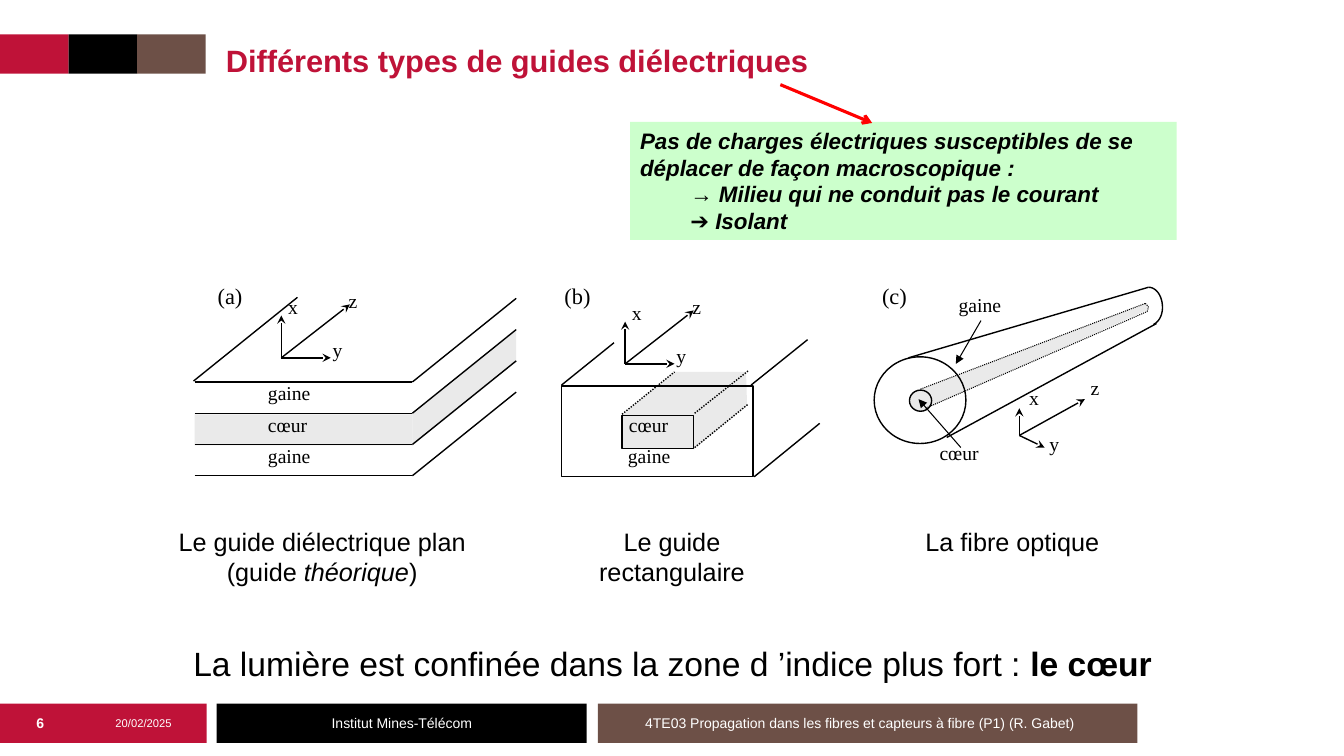
"""Builds the slide on the types of dielectric waveguides."""
from lxml.etree import SubElement
from pptx import Presentation
from pptx.dml.color import RGBColor
from pptx.enum.dml import MSO_LINE
from pptx.enum.shapes import MSO_CONNECTOR, MSO_SHAPE
from pptx.enum.text import MSO_ANCHOR, PP_ALIGN
from pptx.oxml.ns import qn
from pptx.util import Inches, Pt

rgb = RGBColor.from_string
RED, BROWN, BLACK, WHITE, GREY = "BF1238", "6D5047", "000000", "FFFFFF", "EAEAEA"
TOP, MIDDLE, BOTTOM = MSO_ANCHOR.TOP, MSO_ANCHOR.MIDDLE, MSO_ANCHOR.BOTTOM
LEFT, CENTER = PP_ALIGN.LEFT, PP_ALIGN.CENTER
DOT = MSO_LINE.ROUND_DOT

prs = Presentation()
prs.slide_width, prs.slide_height = Inches(13.33), Inches(7.5)
slide = prs.slides.add_slide(prs.slide_layouts[5])
shapes = slide.shapes


def write(s, paras, size, font="Arial", color=BLACK, align=LEFT, anchor=TOP, wrap=True):
    """Fills a shape with paragraphs, each a list of (text, style letters) runs."""
    tf = s.text_frame
    tf.word_wrap, tf.vertical_anchor = wrap, anchor
    tf.margin_left = tf.margin_right = Inches(0.1)
    tf.margin_top = tf.margin_bottom = Inches(0.05)
    for i, runs in enumerate(paras):
        p = tf.add_paragraph() if i else tf.paragraphs[0]
        p.alignment = align
        for text, style in runs:
            r = p.add_run()
            r.text = text
            r.font.name, r.font.size = font, Pt(size)
            r.font.bold, r.font.italic = "b" in style, "i" in style
            r.font.color.rgb = rgb(color)


def draw_line(start, end, width=1, dash=None, tail=None, color=BLACK):
    """Draws a straight line, with an arrowhead at its end if one is named."""
    s = shapes.add_connector(MSO_CONNECTOR.STRAIGHT, *map(Inches, start + end))
    s.line.color.rgb, s.line.width = rgb(color), Pt(width)
    if dash:
        s.line.dash_style = dash
    if tail:
        SubElement(s.element.spPr.find(qn("a:ln")), qn("a:tailEnd"), type=tail)
    SubElement(s.element.spPr, qn("a:effectLst"))


title = shapes.title
title.left, title.top, title.width, title.height = map(Inches, (2.14, -0.02, 10.51, 0.85))
write(title, [[("Différents types de guides diélectriques", "b")]], 22, color=RED, anchor=BOTTOM)

# (points, fill, line width, dash)
outlines = [
    ([(4.09, 4.1), (4.09, 4.42), (5.12, 3.59), (5.12, 3.27), (4.09, 4.1)], GREY, 0, None),
    ([(9.14, 3.86), (11.36, 3.01), (11.38, 3.03), (11.39, 3.06), (11.37, 3.08),
      (9.19, 4.05), (9.25, 3.99), (9.24, 3.92), (9.17, 3.87), (9.14, 3.86)], GREY, 0, None),
    ([(6.88, 4.46), (6.88, 4.11), (7.4, 3.69), (7.41, 4.02), (6.88, 4.46)], GREY, 0, None),
    ([(6.17, 4.12), (6.88, 4.12), (7.4, 3.69), (6.69, 3.69), (6.17, 4.12)], GREY, 0, None),
]
fibre_end = [(11.39, 2.85), (11.47, 2.85), (11.53, 2.94), (11.53, 3.05),
             (11.53, 3.12), (11.5, 3.19), (11.44, 3.22)]
core_end = [(11.36, 3.01), (11.38, 3.03), (11.39, 3.04), (11.39, 3.05),
            (11.39, 3.06), (11.38, 3.08), (11.38, 3.09)]
for curve, width, dash in [(fibre_end, 1, None), (core_end, 0.75, DOT)]:
    points = [curve[0]]
    for a, b, c, d in (curve[:4], curve[3:]):
        for t in [k / 12 for k in range(1, 13)]:
            u = 1 - t
            points.append(tuple(u**3 * a[j] + 3 * u * u * t * b[j] + 3 * u * t * t * c[j]
                                + t**3 * d[j] for j in (0, 1)))
    outlines.append((points, None, width, dash))

painted = []
for points, fill, width, dash in outlines:
    points = [(Inches(x), Inches(y)) for x, y in points]
    builder = shapes.build_freeform(*points[0], scale=1.0)
    builder.add_line_segments(points[1:], close=False)
    painted.append((builder.convert_to_shape(), fill, width, dash))

RECT, OVAL = MSO_SHAPE.RECTANGLE, MSO_SHAPE.OVAL
for kind, box, fill, width in [
    (RECT, (0, 6.98, 2.05, 0.39), RED, 0),
    (RECT, (2.15, 6.98, 3.67, 0.39), BLACK, 0),
    (RECT, (5.93, 6.98, 5.35, 0.39), BROWN, 0),
    (RECT, (0, 0.34, 0.68, 0.39), RED, 0),
    (RECT, (0.68, 0.34, 0.68, 0.39), BLACK, 0),
    (RECT, (1.36, 0.34, 0.68, 0.39), BROWN, 0),
    (RECT, (1.93, 4.11, 2.16, 0.31), GREY, 0),
    (RECT, (5.57, 3.83, 1.9, 0.9), None, 1),
    (RECT, (6.17, 4.12, 0.71, 0.33), GREY, 1),
    (OVAL, (8.67, 3.54, 0.91, 0.86), None, 1),
    (OVAL, (9.02, 3.87, 0.22, 0.21), GREY, 1),
    (RECT, (6.25, 1.21, 5.42, 1.17), "CCFFCC", 0),
]:
    painted.append((shapes.add_shape(kind, *map(Inches, box)), fill, width, None))
callout = painted[-1][0]

for s, fill, width, dash in painted:
    s.shadow.inherit = False
    if fill:
        s.fill.solid()
        s.fill.fore_color.rgb = rgb(fill)
    else:
        s.fill.background()
    if width:
        s.line.color.rgb, s.line.width = rgb(BLACK), Pt(width)
        if dash:
            s.line.dash_style = dash
    else:
        s.line.fill.background()

write(callout, [
    [("Pas de charges électriques susceptibles de se déplacer de façon macroscopique :", "bi")],
    [("\t→ Milieu qui ne conduit pas le courant", "bi")],
    [("\t➔ Isolant", "bi")],
], 16, anchor=TOP)
draw_line((7.74, 0.84), (8.65, 1.22), 2.25, tail="arrow", color="FF0000")

for i in range(4):
    y = 3.79 + 0.31 * i
    draw_line((1.93, y), (4.09, y))
    draw_line((4.09, y), (5.12, y - 0.83))
for start, end in [
    ((1.92, 3.78), (2.95, 2.95)),
    ((5.57, 3.82), (6.09, 3.4)), ((7.45, 3.82), (8.01, 3.37)), ((7.48, 4.73), (8.13, 4.2)),
    ((9.01, 3.55), (11.39, 2.85)), ((9.39, 4.34), (11.47, 3.21)),
]:
    draw_line(start, end)
for start, end, width in [
    ((6.17, 4.11), (6.69, 3.69), 1), ((6.89, 4.1), (7.42, 3.68), 1),
    ((6.89, 4.44), (7.42, 4.01), 1),
    ((9.13, 3.86), (11.36, 3.01), 0.75), ((9.18, 4.05), (11.38, 3.09), 0.75),
]:
    draw_line(start, end, width, DOT)
draw_line((9.73, 3.18), (9.48, 3.61), 0.75, tail="triangle")
draw_line((9.53, 4.44), (9.11, 3.96), 0.75, tail="triangle")

# (text, left, top, width, size)
labels = [
    ("gaine", 2.56, 3.73, 0.63, 14), ("cœur", 2.56, 4.05, 0.6, 14),
    ("gaine", 2.56, 4.36, 0.63, 14), ("cœur", 6.14, 4.05, 0.6, 14),
    ("gaine", 6.13, 4.36, 0.63, 14), ("gaine", 9.41, 2.86, 0.63, 14),
    ("cœur", 9.22, 4.33, 0.6, 14),
    ("(a)", 2.06, 2.75, 0.45, 16), ("(b)", 5.5, 2.75, 0.46, 16), ("(c)", 8.65, 2.75, 0.45, 16),
]
# name: (arrow dx, dy, label dx, dy)
flat_axes = {"x": (0, -0.42, -0.03, -0.67), "y": (0.49, 0, 0.41, -0.25),
             "z": (0.68, -0.53, 0.57, -0.73)}
fibre_axes = {"x": (0, -0.27, 0, -0.54), "y": (0.25, 0.12, 0.2, -0.08),
              "z": (0.65, -0.36, 0.61, -0.64)}
for x, y, axes in [(2.79, 3.55, flat_axes), (6.2, 3.61, flat_axes), (10.11, 4.32, fibre_axes)]:
    for name, (dx, dy, label_dx, label_dy) in axes.items():
        draw_line((x, y), (x + dx, y + dy), tail="stealth")
        labels.append((name, x + label_dx, y + label_dy, 0.3, 14))
for text, x, y, w, size in labels:
    s = shapes.add_textbox(*map(Inches, (x, y, w, 0.34)))
    write(s, [[(text, "")]], size, "Times New Roman", wrap=False)

for box, paras, size in [
    ((1.67, 5.17, 3.05, 0.7), [[("Le guide diélectrique plan", "")],
                               [("(guide ", ""), ("théorique", "i"), (")", "")]], 18),
    ((5.33, 5.17, 2.67, 0.4), [[("Le guide rectangulaire", "")]], 18),
    ((9.08, 5.17, 1.92, 0.4), [[("La fibre optique", "")]], 18),
    ((1.77, 6.33, 9.8, 0.5), [[("La lumière est confinée dans la zone d ’indice plus fort : ", ""),
                               ("le cœur", "b")]], 24),
]:
    write(shapes.add_textbox(*map(Inches, box)), paras, size, align=CENTER, wrap=False)

for text, x, w, size, style in [
    ("6", 0.01, 0.78, 10, "b"),
    ("20/02/2025", 0.79, 1.27, 8, ""),
    ("Institut Mines-Télécom", 2.15, 3.67, 10, ""),
    ("4TE03 Propagation dans les fibres et capteurs à fibre (P1) (R. Gabet)", 5.93, 5.19, 10, ""),
]:
    s = shapes.add_textbox(*map(Inches, (x, 6.98, w, 0.39)))
    write(s, [[(text, style)]], size, color=WHITE, align=CENTER, anchor=MIDDLE)

prs.save("out.pptx")
